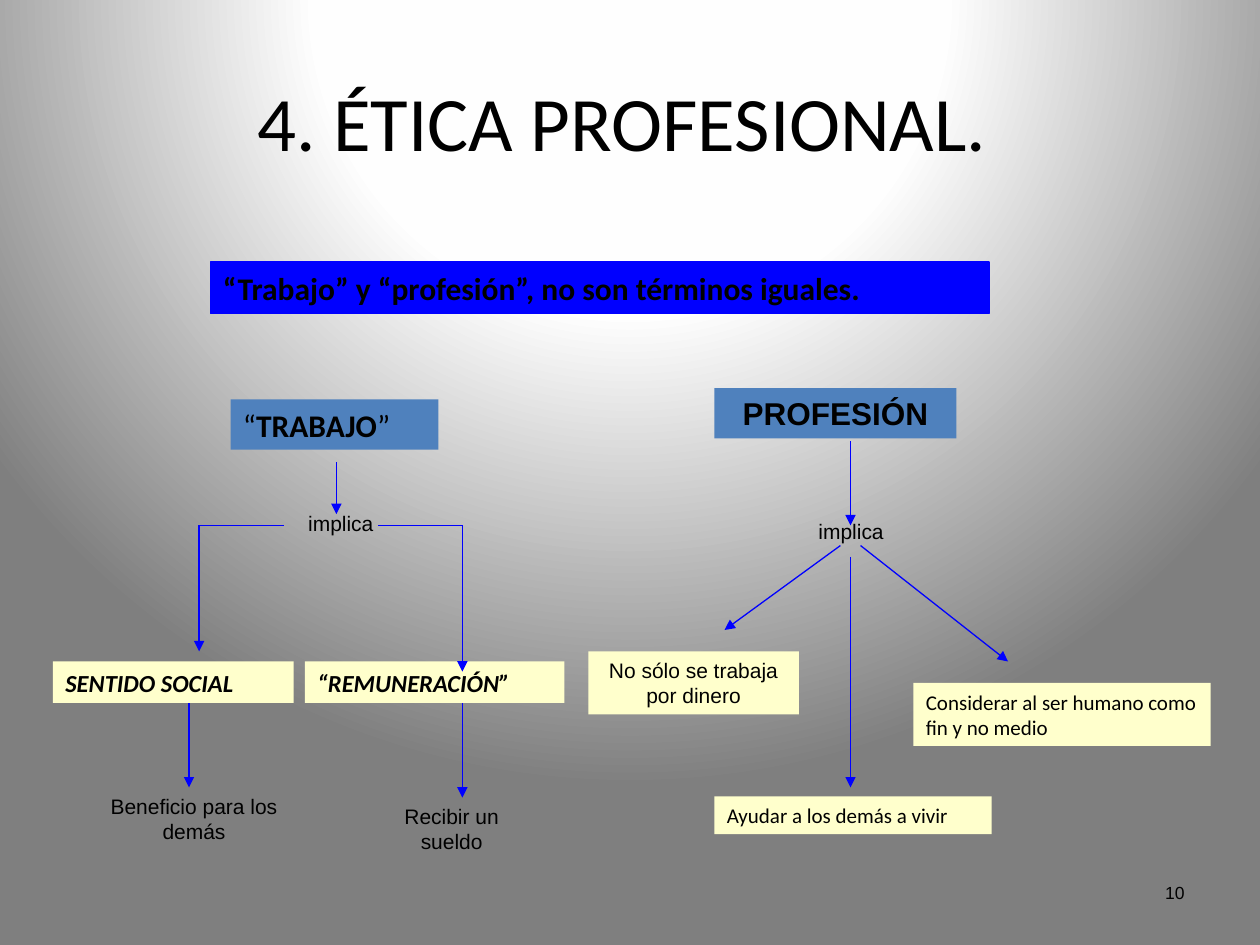
from pptx import Presentation
from pptx.dml.color import RGBColor
from pptx.enum.shapes import MSO_CONNECTOR, MSO_SHAPE
from pptx.enum.text import MSO_ANCHOR, PP_ALIGN
from pptx.oxml import parse_xml
from pptx.oxml.ns import nsdecls, qn
from pptx.util import Inches, Pt

BLACK = RGBColor(0x00, 0x00, 0x00)
BLUE = RGBColor(0x00, 0x00, 0xFF)
STEEL = RGBColor(0x4F, 0x81, 0xBD)
CREAM = RGBColor(0xFF, 0xFF, 0xCC)
BACKGROUND_STOPS = [(0, "FFFFFF"), (40, "FEFEFE"), (100, "7F7F7F")]


def set_background(s):
    """Fill the slide with a circular gradient centred above its top edge."""
    s.background.fill.solid()
    bg = s._element.find(".//" + qn("p:bgPr"))
    stops = "".join(f'<a:gs pos="{pos * 1000}"><a:srgbClr val="{color}"/></a:gs>'
                    for pos, color in BACKGROUND_STOPS)
    bg.replace(bg[0], parse_xml(
        f'<a:gradFill {nsdecls("a")} rotWithShape="1"><a:gsLst>{stops}</a:gsLst>'
        '<a:path path="circle"><a:fillToRect l="50000" t="-80000" r="50000" b="180000"/>'
        '</a:path></a:gradFill>'))


def add_text(s, box, text, size=12, font="Arial", bold=False, italic=False,
             align=PP_ALIGN.CENTER, anchor=MSO_ANCHOR.TOP, fill=None, line=None):
    """Add text in a box; text is a string or a list of (string, bold) runs."""
    at = [Inches(v) for v in box]
    if fill is None:
        sp = s.shapes.add_textbox(*at)
    else:
        sp = s.shapes.add_shape(MSO_SHAPE.RECTANGLE, *at)
        sp.shadow.inherit = False
        sp.fill.solid()
        sp.fill.fore_color.rgb = fill
        if line is None:
            sp.line.fill.background()
        else:
            sp.line.color.rgb = line
            sp.line.width = Pt(0.75)
    tf = sp.text_frame
    tf.word_wrap = True
    tf.vertical_anchor = anchor
    p = tf.paragraphs[0]
    p.alignment = align
    for run_text, run_bold in [(text, bold)] if isinstance(text, str) else text:
        r = p.add_run()
        r.text = run_text
        r.font.name = font
        r.font.size = Pt(size)
        r.font.bold = run_bold
        r.font.italic = italic
        r.font.color.rgb = BLACK
    return sp


def add_label(s, box, text, **fmt):
    """Add a filled, left-aligned Calibri label."""
    return add_text(s, box, text, font="Calibri", align=PP_ALIGN.LEFT,
                    anchor=MSO_ANCHOR.MIDDLE, **fmt)


def add_line(s, start, end, arrow=True):
    cx = s.shapes.add_connector(MSO_CONNECTOR.STRAIGHT,
                                *[Inches(v) for v in (*start, *end)])
    cx.line.color.rgb = BLUE
    cx.line.width = Pt(0.75)
    if arrow:
        cx.line._get_or_add_ln().append(
            parse_xml(f'<a:tailEnd {nsdecls("a")} type="triangle"/>'))
    cx._element.spPr.append(parse_xml(f'<a:effectLst {nsdecls("a")}/>'))
    return cx


def add_header(s, x, y, w, h):
    add_text(s, (x, y, w, h), "4. ÉTICA PROFESIONAL. ", size=44, font="Calibri",
             anchor=MSO_ANCHOR.MIDDLE)
    add_label(s, (x + 0.5, y + 1.75, 6.18, 0.41),
              "“Trabajo” y “profesión”, no son términos iguales.",
              size=18, bold=True, fill=BLUE, line=BLUE)


def add_work_tree(s, x, y):
    add_label(s, (x + 1.41, y, 1.65, 0.4),
              [("“", False), ("TRABAJO", True), ("”", False)], size=18, fill=STEEL)
    for dx, w, text in [(0, 1.91, "SENTIDO SOCIAL"), (2, 2.06, "“REMUNERACIÓN”")]:
        add_label(s, (x + dx, y + 2.08, w, 0.33), text,
                  size=14, bold=True, italic=True, fill=CREAM)
    add_text(s, (x + 1.16, y + 0.83, 2.25, 0.3), "implica")
    add_line(s, (x + 2.25, y + 0.5), (x + 2.25, y + 0.91))

    # Each branch: inner end, corner, arrow tip, then the arrow to its result
    for inner, corner, tip, result_x, result_y in [
            (1.83, 1.16, 2, 1.08, 3.08), (2.58, 3.25, 2.16, 3.25, 3.16)]:
        add_line(s, (x + inner, y + 1), (x + corner, y + 1), arrow=False)
        add_line(s, (x + corner, y + 1), (x + corner, y + tip))
        add_line(s, (x + result_x, y + 2.41), (x + result_x, y + result_y))
    add_text(s, (x + 0.16, y + 3.08, 1.92, 0.5), "Beneficio para los demás")
    add_text(s, (x + 2.5, y + 3.16, 1.33, 0.5), "Recibir un sueldo")


def add_profession_tree(s, x, y):
    add_text(s, (x + 1, y, 1.92, 0.4), "PROFESIÓN", size=18, bold=True, fill=STEEL)
    add_text(s, (x + 1.25, y + 0.99, 1.67, 0.3), "implica")
    for x1, y1, x2, y2 in [(2.08, 0.42, 2.08, 1.09), (2, 1.25, 1.08, 1.92),
                           (2.08, 1.34, 2.08, 3.17), (2.16, 1.25, 3.33, 2.17)]:
        add_line(s, (x + x1, y + y1), (x + x2, y + y2))
    add_text(s, (x, y + 2.09, 1.67, 0.5), "No sólo se trabaja por dinero", fill=CREAM)
    add_label(s, (x + 1, y + 3.24, 2.2, 0.3), "Ayudar a los demás a vivir", fill=CREAM)
    add_label(s, (x + 2.58, y + 2.34, 2.36, 0.5),
              "Considerar al ser humano como fin y no medio", fill=CREAM)


def main():
    prs = Presentation()
    prs.slide_width, prs.slide_height = Inches(10), Inches(7.5)
    s = prs.slides.add_slide(prs.slide_layouts[6])
    set_background(s)
    add_header(s, 1.17, 0.33, 7.68, 1.25)
    add_work_tree(s, 0.42, 3.17)
    add_profession_tree(s, 4.67, 3.08)
    add_text(s, (7.17, 6.95, 2.33, 0.4), "10", size=10, align=PP_ALIGN.RIGHT)
    prs.save("out.pptx")


if __name__ == "__main__":
    main()
